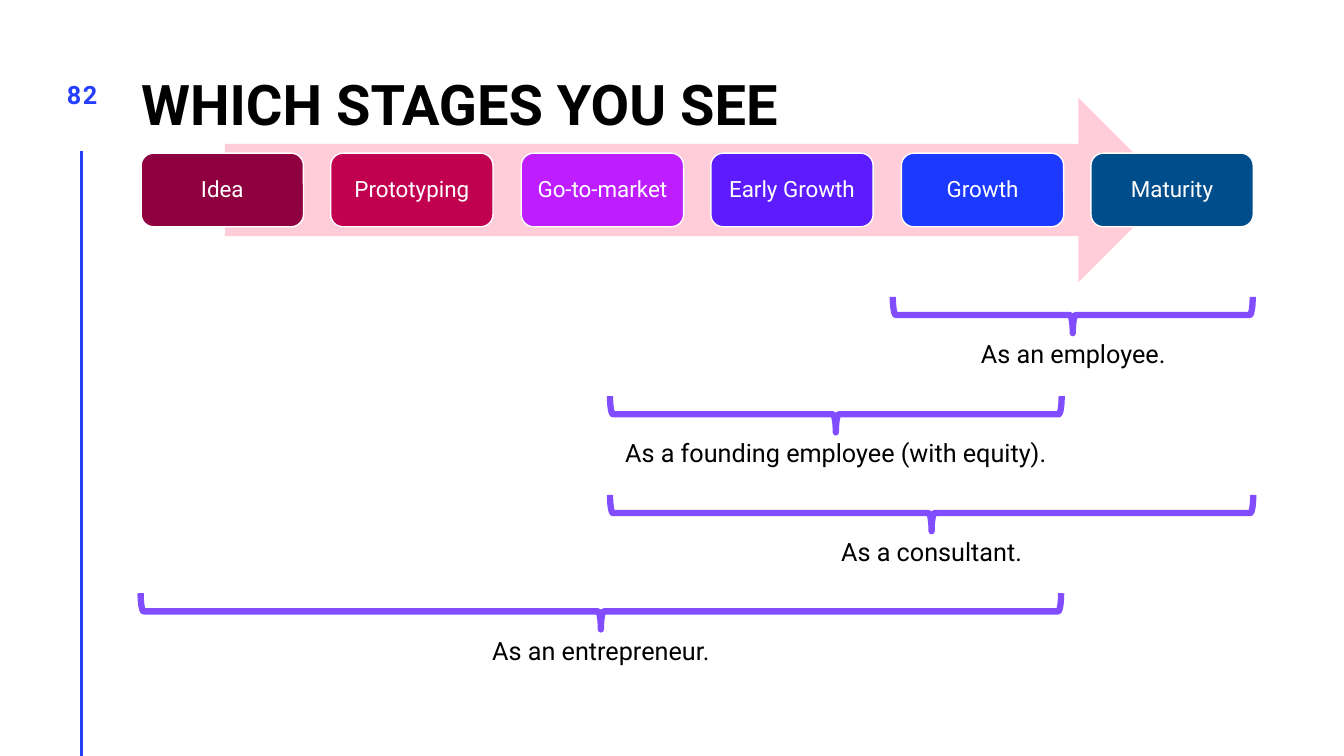
"""Build the slide that maps startup stages to the roles in which you see them."""
from pptx import Presentation
from pptx.dml.color import RGBColor
from pptx.enum.shapes import MSO_CONNECTOR, MSO_SHAPE
from pptx.enum.text import MSO_ANCHOR, PP_ALIGN
from pptx.oxml.ns import qn
from pptx.util import Pt
from lxml import etree

STRAIGHT = MSO_CONNECTOR.STRAIGHT
ARROW = MSO_SHAPE.RIGHT_ARROW
ROUNDED = MSO_SHAPE.ROUNDED_RECTANGLE
BRACE = MSO_SHAPE.LEFT_BRACE
TOP, MIDDLE, BOTTOM = MSO_ANCHOR.TOP, MSO_ANCHOR.MIDDLE, MSO_ANCHOR.BOTTOM
LEFT, CENTER = PP_ALIGN.LEFT, PP_ALIGN.CENTER
PX = 9144


def color(value):
    return RGBColor.from_string(value)


def write(shape, text, size, ink, align=CENTER, anchor=TOP, inset=0, bold=False):
    frame = shape.text_frame
    frame.word_wrap = True
    frame.vertical_anchor = anchor
    frame.margin_left = frame.margin_right = inset * PX
    frame.margin_top = frame.margin_bottom = inset // 2 * PX
    paragraph = frame.paragraphs[0]
    paragraph.alignment = align
    paragraph.add_run().text = text
    paragraph.font.name = "Roboto"
    paragraph.font.size = Pt(size)
    paragraph.font.bold = bold
    paragraph.font.color.rgb = color(ink)
    return paragraph


deck = Presentation()
deck.slide_width, deck.slide_height = 1333 * PX, 750 * PX
slide = deck.slides.add_slide(deck.slide_layouts[6])
shapes = slide.shapes

margin_rule = shapes.add_connector(STRAIGHT, 81 * PX, 150 * PX, 81 * PX, 750 * PX)
margin_rule.line.color.rgb = color("243FFF")
margin_rule.line.width = Pt(2)
etree.SubElement(margin_rule._element.spPr, qn("a:effectLst"))

title = shapes.add_textbox(140 * PX, -4 * PX, 1103 * PX, 140 * PX)
heading = write(title, "WHICH STAGES YOU SEE", 40, "000000", LEFT, BOTTOM, bold=True)
heading.line_spacing = Pt(40)

roles = [
    ("As an employee.", 886, 1243, 357),
    ("As a founding employee (with equity).", 605, 1053, 526),
    ("As a consultant.", 605, 1243, 638),
    ("As an entrepreneur.", 140, 1053, 792),
]
BRACE_DEPTH = 36
for row, (role, start, end, label_width) in enumerate(roles):
    top = 295 + 98 * row
    span = end - start
    middle = (start + end) // 2
    brace = shapes.add_shape(
        BRACE, (middle - BRACE_DEPTH // 2) * PX, (top + (BRACE_DEPTH - span) // 2) * PX,
        BRACE_DEPTH * PX, span * PX)
    brace.rotation = 270
    brace.shadow.inherit = False
    brace.fill.background()
    brace.line.color.rgb = color("814DFF")
    brace.line.width = Pt(4.5)
    label = shapes.add_textbox(
        (middle - label_width // 2) * PX, (top + BRACE_DEPTH) * PX, label_width * PX, 40 * PX)
    write(label, role, 18, "000000", inset=10)

progress = shapes.add_shape(ARROW, 223 * PX, 97 * PX, 938 * PX, 183 * PX)
progress.shadow.inherit = False
progress.fill.solid()
progress.fill.fore_color.rgb = color("FFCDD9")
progress.line.fill.background()

stages = [
    ("Idea", "8F0041"),
    ("Prototyping", "C1004F"),
    ("Go-to-market", "BD1DFF"),
    ("Early Growth", "5D1CFF"),
    ("Growth", "1B39FF"),
    ("Maturity", "004D8C"),
]
FIRST_STAGE, LAST_STAGE = 140, 1082
for column, (stage, tint) in enumerate(stages):
    left = FIRST_STAGE + round((LAST_STAGE - FIRST_STAGE) * column / (len(stages) - 1))
    card = shapes.add_shape(ROUNDED, left * PX, 152 * PX, 161 * PX, 73 * PX)
    card.shadow.inherit = False
    card.fill.solid()
    card.fill.fore_color.rgb = color(tint)
    card.line.color.rgb = color("FFFFFF")
    card.line.width = Pt(1)
    write(card, stage, 16, "FFFFFF", anchor=MIDDLE, inset=7).line_spacing = 0.9

page_number = shapes.add_textbox(53 * PX, 79 * PX, 57 * PX, 57 * PX)
number = write(page_number, "82", 18, "243FFF", bold=True)
number.runs[0]._r.get_or_add_rPr().set("spc", "100")

deck.save("out.pptx")
